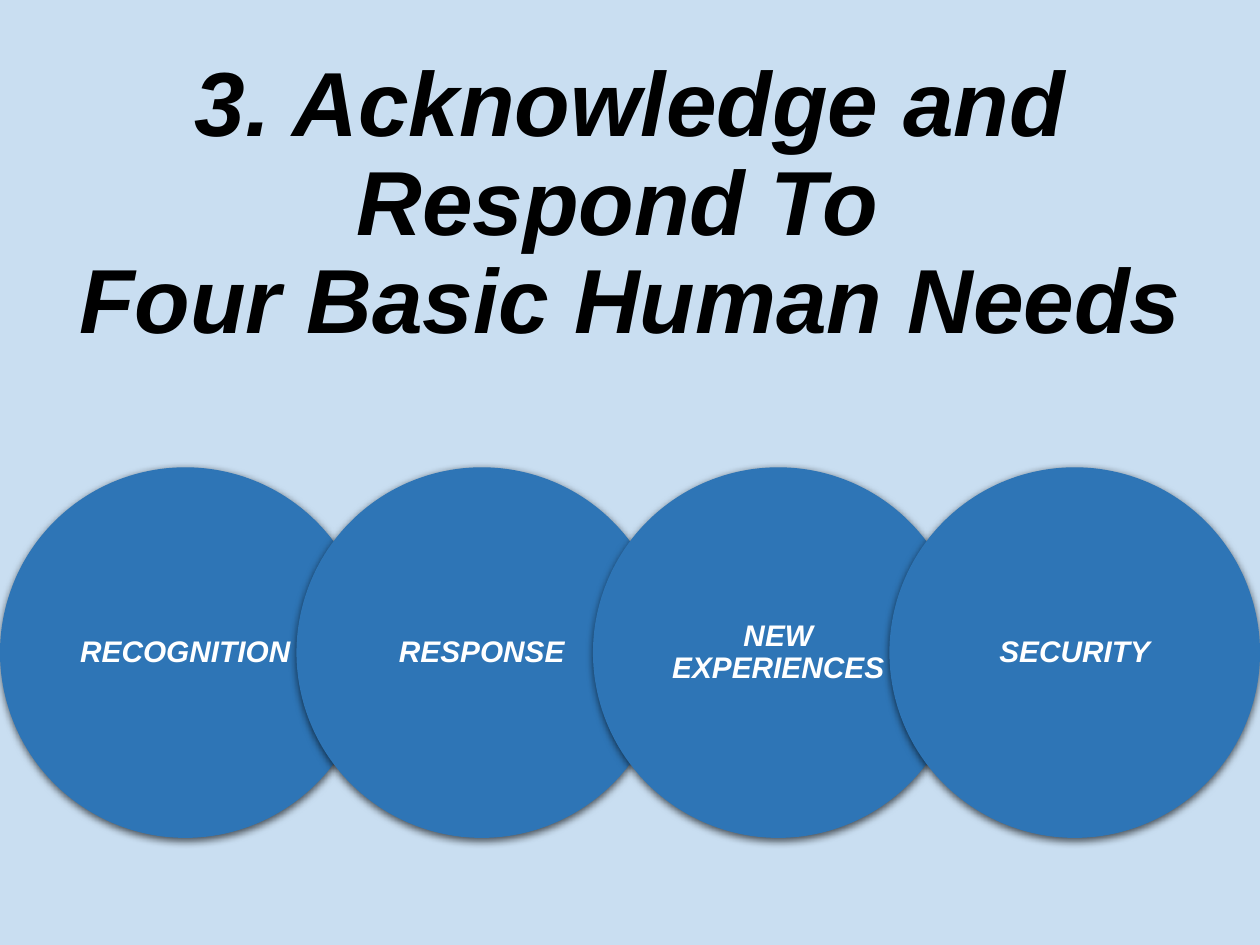
from math import sqrt

from lxml.etree import SubElement
from pptx import Presentation
from pptx.dml.color import RGBColor
from pptx.enum.shapes import MSO_SHAPE
from pptx.enum.text import MSO_ANCHOR, PP_ALIGN
from pptx.oxml.ns import qn
from pptx.util import Cm, Pt

SKY = RGBColor(0xC9, 0xDE, 0xF1)
BLUE = RGBColor(0x2E, 0x75, 0xB6)
BLACK = RGBColor(0, 0, 0)
WHITE = RGBColor(0xFF, 0xFF, 0xFF)
NEEDS = ["RECOGNITION", "RESPONSE", "NEW EXPERIENCES", "SECURITY"]
WIDTH = 25.4


def add_text(slide, box, text, size, color, inset):
    """Place centred bold italic text in a box of centimetres."""
    frame = slide.shapes.add_textbox(*map(Cm, box)).text_frame
    frame.word_wrap = True
    frame.vertical_anchor = MSO_ANCHOR.MIDDLE
    frame.margin_left = frame.margin_right = Cm(inset[0])
    frame.margin_top = frame.margin_bottom = Cm(inset[1])
    para = frame.paragraphs[0]
    para.text = text
    para.alignment = PP_ALIGN.CENTER
    para.line_spacing = 0.9
    for run in para.runs:
        font = run.font
        font.name, font.size = "Arial", Pt(size)
        font.bold = font.italic = True
        font.color.rgb = color


def add_shadow(shape):
    """Give a shape a soft black shadow falling straight down."""
    shape.shadow.inherit = False
    effects = shape.element.spPr.find(qn("a:effectLst"))
    outer = SubElement(effects, qn("a:outerShdw"), blurRad=str(Pt(4.5)),
                       dist=str(Pt(1.5)), dir="5400000", algn="ctr",
                       rotWithShape="0")
    black = SubElement(outer, qn("a:srgbClr"), val="000000")
    SubElement(black, qn("a:alpha"), val="63000")


def add_title(slide, box):
    """Place the heading in its box."""
    text = "3. Acknowledge and Respond To \vFour Basic Human Needs"
    add_text(slide, box, text, 52, BLACK, (0.25, 0.13))


def add_needs(slide, left, top, width):
    """Spread overlapping labelled circles across a width."""
    ratio = 0.8
    size = width / (1 + ratio * (len(NEEDS) - 1))
    side = size / sqrt(2)
    pad = (size - side) / 2
    for i, need in enumerate(NEEDS):
        x = left + i * ratio * size
        disc = slide.shapes.add_shape(
            MSO_SHAPE.OVAL, Cm(x), Cm(top), Cm(size), Cm(size))
        disc.fill.solid()
        disc.fill.fore_color.rgb = BLUE
        disc.line.fill.background()
        add_shadow(disc)
        add_text(slide, (x + pad, top + pad, side, side), need, 17, WHITE,
                 (0.41, 0.05))


def main():
    """Build and save the slide."""
    deck = Presentation()
    deck.slide_width, deck.slide_height = Cm(WIDTH), Cm(19.05)
    slide = deck.slides.add_slide(deck.slide_layouts[6])
    fill = slide.background.fill
    fill.solid()
    fill.fore_color.rgb = SKY
    add_title(slide, (0.64, 1.07, 24.13, 6.15))
    add_needs(slide, 0, 9.42, WIDTH)
    deck.save("out.pptx")


if __name__ == "__main__":
    main()
